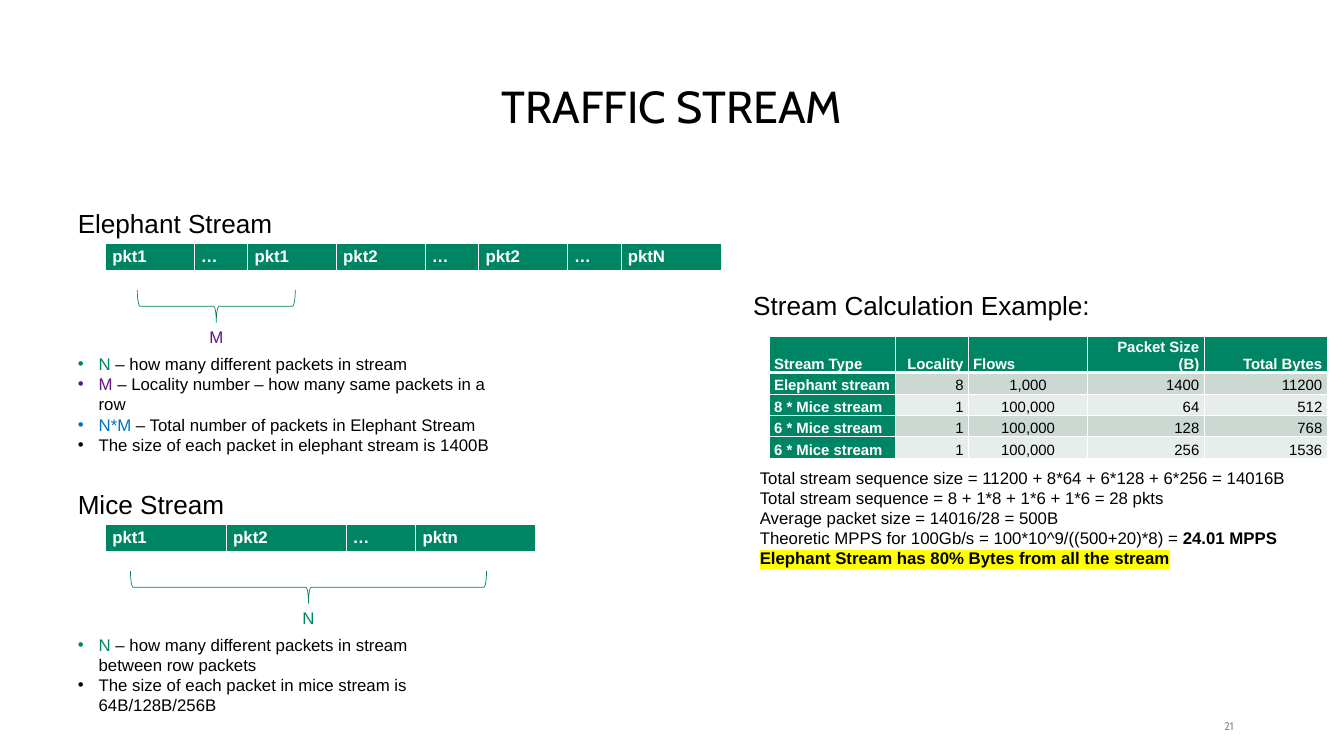
from lxml import etree
from pptx import Presentation
from pptx.dml.color import RGBColor
from pptx.enum.shapes import MSO_SHAPE
from pptx.enum.text import MSO_ANCHOR, MSO_AUTO_SIZE, PP_ALIGN
from pptx.oxml.ns import qn
from pptx.util import Cm, Pt

LEFT, CENTER, RIGHT = PP_ALIGN.LEFT, PP_ALIGN.CENTER, PP_ALIGN.RIGHT
TOP, MIDDLE, BOTTOM = MSO_ANCHOR.TOP, MSO_ANCHOR.MIDDLE, MSO_ANCHOR.BOTTOM
RIGHT_BRACE = MSO_SHAPE.RIGHT_BRACE
NO_AUTOFIT = MSO_AUTO_SIZE.NONE

GREEN, BRACE_GREEN, PURPLE, BLUE = "008564", "008262", "5D1682", "0071C5"
BLACK, WHITE, GRAY, YELLOW = "000000", "FFFFFF", "8C8C8C", "FFFF00"
BANDS = ("CCD9D3", "E7EDEA")


def rgb(color):
    return RGBColor.from_string(color)


def add_run(p, text, size=18, color=BLACK, bold=False, font="Arial", highlight=None):
    r = p.add_run()
    r.text = text
    r.font.size = Pt(size)
    r.font.bold = bold
    r.font.color.rgb = rgb(color)
    if highlight:
        mark = etree.SubElement(r.font.fill._xPr, qn("a:highlight"))
        etree.SubElement(mark, qn("a:srgbClr"), val=highlight)
    r.font.name = font


def add_bullet(p):
    pPr = p._p.get_or_add_pPr()
    pPr.set("marL", str(Cm(0.79)))
    pPr.set("indent", str(-Cm(0.79)))
    etree.SubElement(pPr, qn("a:buFont"), typeface="Arial")
    etree.SubElement(pPr, qn("a:buChar"), char="•")


def add_text(slide, box, paragraphs, align=LEFT, anchor=TOP, bullets=False, inset=None):
    """Each paragraph is a list of (text, run options) pairs."""
    tf = slide.shapes.add_textbox(*map(Cm, box)).text_frame
    tf.word_wrap = True
    tf.vertical_anchor = anchor
    if inset is not None:
        tf.margin_left = tf.margin_right = tf.margin_top = tf.margin_bottom = Cm(inset)
    for i, runs in enumerate(paragraphs):
        p = tf.add_paragraph() if i else tf.paragraphs[0]
        if bullets:
            add_bullet(p)
        p.alignment = align
        for text, options in runs:
            add_run(p, text, **options)


def add_borders(cell, bottom):
    tcPr = cell._tc.get_or_add_tcPr()
    for i, (side, width) in enumerate((("L", 1), ("R", 1), ("T", 1), ("B", bottom))):
        ln = etree.Element(qn("a:ln" + side), w=str(Pt(width)))
        fill = etree.SubElement(ln, qn("a:solidFill"))
        etree.SubElement(fill, qn("a:srgbClr"), val=WHITE)
        tcPr.insert(i, ln)


def fill_cell(cell, text, fill, size, color=WHITE, bold=True, align=LEFT, bottom=1):
    cell.fill.solid()
    cell.fill.fore_color.rgb = rgb(fill)
    add_borders(cell, bottom)
    p = cell.text_frame.paragraphs[0]
    p.alignment = align
    add_run(p, text, size, color, bold)


def add_grid(slide, left, top, widths, heights):
    frame = slide.shapes.add_table(len(heights), len(widths), Cm(left), Cm(top),
                                   Cm(sum(widths)), Cm(sum(heights)))
    table = frame.table
    table.first_row = table.horz_banding = False
    for column, width in zip(table.columns, widths):
        column.width = Cm(width)
    for row, height in zip(table.rows, heights):
        row.height = Cm(height)
    return table


def add_brace(slide, left, top, width, height):
    """Brace pointing down; the box is the one it covers after the turn."""
    shift = (width - height) / 2
    sp = slide.shapes.add_shape(RIGHT_BRACE, Cm(left + shift), Cm(top - shift),
                                Cm(height), Cm(width))
    sp.rotation = 90
    sp.shadow.inherit = False
    sp.fill.background()
    sp.line.color.rgb = rgb(BRACE_GREEN)
    sp.line.width = Pt(0.75)


def add_title(slide, box, text):
    title = slide.shapes.title
    title.left, title.top, title.width, title.height = map(Cm, box)
    tf = title.text_frame
    tf.auto_size = NO_AUTOFIT
    tf.word_wrap = True
    tf.vertical_anchor = BOTTOM
    p = tf.paragraphs[0]
    p.alignment = CENTER
    p.line_spacing = 0.9
    add_run(p, text, 48, font="Cabin")


def add_stream(slide, box, heading, packets, brace, label, notes):
    """Heading, packet strip, labelled brace and bullets.

    packets holds (text, width) pairs; brace is (offset, width).
    """
    left, top, width, height = box
    add_text(slide, (left, top, 13.16, 1.45), [[(heading, {"size": 28})]])

    strip = add_grid(slide, left + 1.3, top + 1.5, [w for _, w in packets], [1.04])
    for cell, (text, _) in zip(strip.rows[0].cells, packets):
        fill_cell(cell, text, GREEN, 18, bottom=3)

    offset, span = brace
    add_brace(slide, left + offset, top + 3.25, span, 1.22)
    text, color = label
    add_text(slide, (left + offset + span / 2 - 0.75, top + 4.5, 1.5, 1.04),
             [[(text, {"color": color})]], CENTER)
    add_text(slide, (left, top + 5.53, width, height - 5.53), notes, bullets=True)


def add_calculation(slide, box, heading, header, rows, results):
    left, top, width, height = box
    add_text(slide, (left, top, 14.73, 1.45), [[(heading, {"size": 28})]])

    table = add_grid(slide, left + 0.86, top + 1.91, [4.78, 2.74, 4.52, 4.39, 4.65],
                     [1.35] + [0.81] * len(rows))
    for i, values in enumerate([header] + rows):
        for j, value in enumerate(values):
            cell = table.cell(i, j)
            cell.vertical_anchor = BOTTOM
            cell.margin_left = cell.margin_right = Cm(0.18)
            cell.margin_top = cell.margin_bottom = 0
            if i == 0:
                align = LEFT if j in (0, 2) else RIGHT
                fill_cell(cell, value, GREEN, 16, align=align, bottom=3)
            elif j == 0:
                fill_cell(cell, value, GREEN, 16)
            else:
                align = CENTER if j == 2 else RIGHT
                fill_cell(cell, value, BANDS[(i - 1) % 2], 16, BLACK, False, align)

    add_text(slide, (left + 0.25, top + 5.94, width - 0.25, height - 5.94), results,
             anchor=MIDDLE)


def main():
    prs = Presentation()
    prs.slide_width, prs.slide_height = Cm(50.8), Cm(28.58)
    slide = prs.slides.add_slide(prs.slide_layouts[5])

    add_title(slide, (2.31, 2.41, 46.18, 2.74), "TRAFFIC STREAM")
    add_text(slide, (45.14, 27.2, 1.5, 0.51),
             [[("21", {"size": 12, "color": GRAY, "font": "Cabin"})]],
             RIGHT, MIDDLE, inset=0)

    add_stream(
        slide, (2.69, 7.72, 16.48, 9.64), "Elephant Stream",
        [("pkt1", 3.35), ("…", 2.03), ("pkt1", 3.35), ("pkt2", 3.35),
         ("…", 2.03), ("pkt2", 3.35), ("…", 2.03), ("pktN", 3.78)],
        (2.5, 5.97), ("M", PURPLE),
        [[("N", {"color": GREEN}), (" – how many different packets in stream", {})],
         [("M", {"color": PURPLE}),
          (" – Locality number – how many same packets in a row", {})],
         [("N*M", {"color": BLUE}),
          (" – Total number of packets in Elephant Stream", {})],
         [("The size of each packet in elephant stream is 1400B", {})]])

    add_stream(
        slide, (2.69, 18.34, 15.4, 8.84), "Mice Stream",
        [("pkt1", 4.57), ("pkt2", 4.52), ("…", 2.64), ("pktn", 4.52)],
        (2.24, 13.46), ("N", GREEN),
        [[("N ", {"color": GREEN}),
          ("– how many different packets in stream between row packets", {})],
         [("The size of each packet in mice stream is 64B/128B/256B", {})]])

    add_calculation(
        slide, (28.22, 10.82, 22.58, 11.58), "Stream Calculation Example:",
        ["Stream Type", "Locality", "Flows", "Packet Size (B)", "Total Bytes"],
        [["Elephant stream", "8", "1,000", "1400", "11200"],
         ["8 * Mice stream", "1", "100,000", "64", "512"],
         ["6 * Mice stream", "1", "100,000", "128", "768"],
         ["6 * Mice stream", "1", "100,000", "256", "1536"]],
        [[("Total stream sequence size = 11200 + 8*64 + 6*128 + 6*256 = 14016B", {})],
         [("Total stream sequence = 8 + 1*8 + 1*6 + 1*6 = 28 pkts", {})],
         [("Average packet size = 14016/28 = 500B", {})],
         [("Theoretic MPPS for 100Gb/s = 100*10^9/((500+20)*8) = ", {}),
          ("24.01 MPPS", {"bold": True})],
         [("Elephant Stream has 80% Bytes from all the stream",
           {"bold": True, "highlight": YELLOW})]])

    prs.save("out.pptx")


if __name__ == "__main__":
    main()
